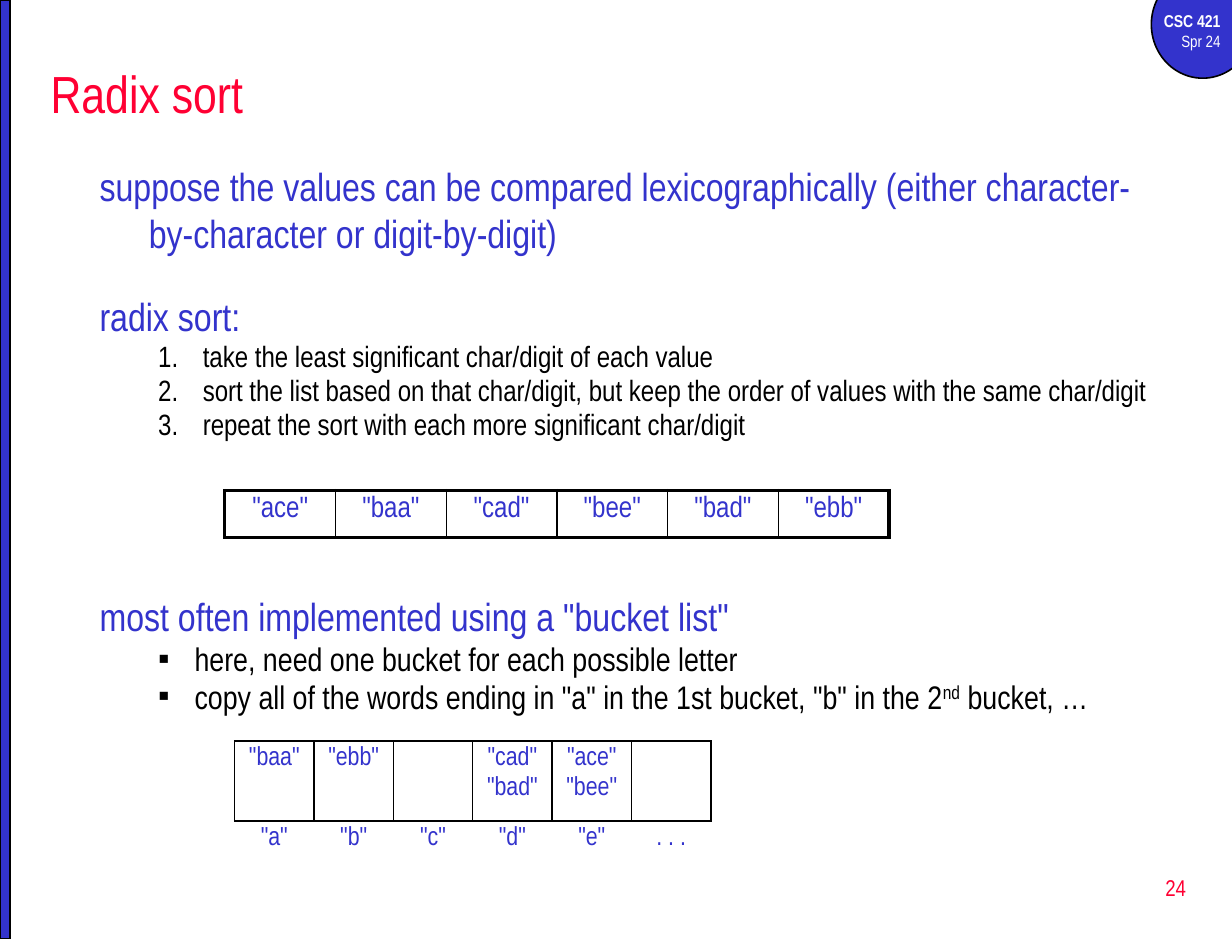
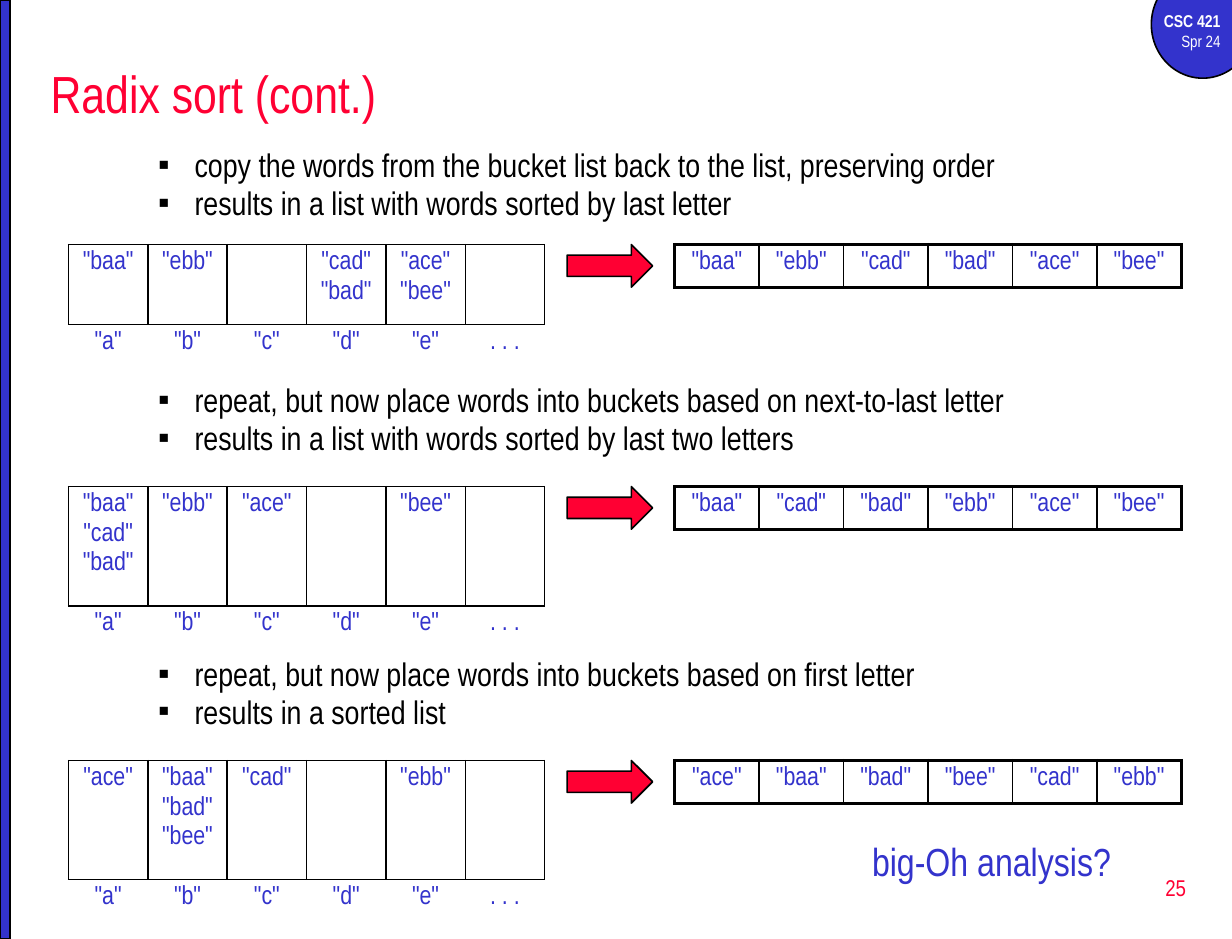
from lxml.etree import SubElement
from pptx import Presentation
from pptx.dml.color import RGBColor
from pptx.enum.shapes import MSO_SHAPE
from pptx.enum.text import MSO_ANCHOR, PP_ALIGN
from pptx.oxml.ns import qn
from pptx.util import Inches, Pt

BLUE = RGBColor(0x33, 0x33, 0xCC)
RED = RGBColor(0xFF, 0x00, 0x33)
BLACK = RGBColor(0, 0, 0)
WHITE = RGBColor(0xFF, 0xFF, 0xFF)
FONT = "Arial Narrow"
COLUMNS, ROWS = 126, 96
WIDTH, HEIGHT = Inches(10.5), Inches(8)
THIN, THICK = 1, 2.25
LETTERS = ['"a"', '"b"', '"c"', '"d"', '"e"', ". . ."]
BY_LAST_LETTER = ["baa", "ebb", "", "cad bad", "ace bee", ""]
PASSES = [
    (25, 15,
     ["copy the words from the bucket list back to the list, preserving order",
      "results in a list with words sorted by last letter"],
     BY_LAST_LETTER, "baa ebb cad bad ace bee"),
    (49.75, 39,
     ["repeat, but now place words into buckets based on next-to-last letter",
      "results in a list with words sorted by last two letters"],
     ["baa cad bad", "ebb", "ace", "", "bee", ""], "baa cad bad ebb ace bee"),
    (77.75, 67,
     ["repeat, but now place words into buckets based on first letter",
      "results in a sorted list"],
     ["ace", "baa bad bee", "cad", "", "ebb", ""], "ace baa bad bee cad ebb"),
]


def across(columns):
    """Return the length of a number of grid columns."""
    return round(WIDTH * columns / COLUMNS)


def down(rows):
    """Return the length of a number of grid rows."""
    return round(HEIGHT * rows / ROWS)


def place(left, top, width, height):
    """Return a grid area as slide lengths."""
    return across(left), down(top), across(width), down(height)


def style(paragraph, size, color, align=PP_ALIGN.LEFT, bold=False):
    """Format every run of a paragraph."""
    paragraph.alignment = align
    for run in paragraph.runs:
        run.font.name = FONT
        run.font.size = Pt(size)
        run.font.bold = bold
        run.font.color.rgb = color


def space_before(paragraph, percent):
    """Set the gap above a paragraph as a share of its text size."""
    properties = paragraph._p.get_or_add_pPr()
    gap = properties.makeelement(qn("a:spcBef"), {})
    SubElement(gap, qn("a:spcPct"), val=str(percent * 1000))
    properties.insert(0, gap)


def indent(paragraph, margin, hanging):
    """Give a paragraph a hanging indent in inches."""
    properties = paragraph._p.get_or_add_pPr()
    properties.set("marL", str(Inches(margin)))
    properties.set("indent", str(-Inches(hanging)))


def add_text(slide, area, lines, anchor=MSO_ANCHOR.TOP):
    """Add a wrapping text box and return its paragraphs."""
    frame = slide.shapes.add_textbox(*place(*area)).text_frame
    frame.word_wrap = True
    frame.vertical_anchor = anchor
    frame.text = "\n".join(lines)
    return frame.paragraphs


def heading(paragraph, percent=20):
    """Format a blue statement."""
    style(paragraph, 24, BLUE)
    space_before(paragraph, percent)


def list_item(paragraph, size, margin, hanging):
    """Format a tight second-level item and return its properties."""
    style(paragraph, size, BLACK)
    paragraph.level = 1
    space_before(paragraph, 20)
    paragraph.line_spacing = 0.8
    indent(paragraph, margin, hanging)
    return paragraph._p.get_or_add_pPr()


def bullet_item(paragraph):
    """Format an item with a square bullet."""
    properties = list_item(paragraph, 20, 0.81, 0.31)
    SubElement(properties, qn("a:buFont"), typeface="Arial")
    SubElement(properties, qn("a:buChar"), char="▪")


def numbered_item(paragraph):
    """Format a numbered step."""
    properties = list_item(paragraph, 18, 0.88, 0.38)
    SubElement(properties, qn("a:buFont"), typeface="+mj-lt")
    SubElement(properties, qn("a:buAutoNum"), type="arabicPeriod")


def add_filled(slide, preset, area, color):
    """Add a filled shape with a thin black outline."""
    shape = slide.shapes.add_shape(preset, *place(*area))
    shape.shadow.inherit = False
    shape.fill.solid()
    shape.fill.fore_color.rgb = color
    shape.line.color.rgb = BLACK
    shape.line.width = Pt(THIN)
    return shape


def set_borders(cell, left, right, top, bottom):
    """Draw the cell sides with the given widths, zero for none."""
    properties = cell._tc.get_or_add_tcPr()
    for side, width in zip("LRTB", (left, right, top, bottom)):
        line = SubElement(properties, qn(f"a:ln{side}"), w=str(Pt(width)))
        if width:
            fill = SubElement(line, qn("a:solidFill"))
            SubElement(fill, qn("a:srgbClr"), val=str(BLACK))
        else:
            SubElement(line, qn("a:noFill"))


def fill_cell(cell, text, size, borders):
    """Write centred words into a bordered cell without fill."""
    cell.text_frame.text = text
    for paragraph in cell.text_frame.paragraphs:
        style(paragraph, size, BLUE, PP_ALIGN.CENTER)
        space_before(paragraph, 20)
    set_borders(cell, *borders)
    cell.fill.background()


def add_grid(slide, left, top, column_width, row_heights):
    """Add an unstyled table with one column for each letter."""
    count = len(LETTERS)
    area = place(left, top, count * column_width, sum(row_heights))
    table = slide.shapes.add_table(len(row_heights), count, *area).table
    table.first_row = table.horz_banding = False
    for column in table.columns:
        column.width = across(column_width)
    for row, height in zip(table.rows, row_heights):
        row.height = down(height)
    return table


def quoted(words):
    """Return the words in quotes, one on each line."""
    return "\n".join(f'"{word}"' for word in words.split())


def add_word_list(slide, left, top, column_width, height, size, words):
    """Add the one-row list of words with a thick frame."""
    table = add_grid(slide, left, top, column_width, [height])
    words = words.split()
    for index, word in enumerate(words):
        first = THICK if index == 0 else THIN
        last = THICK if index == len(words) - 1 else THIN
        fill_cell(table.cell(0, index), quoted(word), size, (first, last, THICK, THICK))


def add_buckets(slide, left, top, buckets):
    """Add the buckets with their letters below."""
    depth = max(len(words.split()) for words in buckets)
    table = add_grid(slide, left, top, 8.12, [4 * depth + 0.2, 8])
    for index, (words, letter) in enumerate(zip(buckets, LETTERS)):
        fill_cell(table.cell(0, index), quoted(words), 16, (THIN,) * 4)
        fill_cell(table.cell(1, index), letter, 16, (0, 0, THIN, 0))


def add_page(deck, title, number):
    """Add a slide with the band, course badge, title and number."""
    slide = deck.slides.add_slide(deck.slide_layouts[6])
    add_filled(slide, MSO_SHAPE.OVAL, (117.75, -3, 10.5, 11), BLUE)
    course, term = add_text(slide, (116, 0.5, 10, 5.5), ["CSC 421", "Spr 24"])
    style(course, 10.5, WHITE, PP_ALIGN.RIGHT, bold=True)
    style(term, 10, WHITE, PP_ALIGN.RIGHT)
    add_filled(slide, MSO_SHAPE.RECTANGLE, (0, 0, 1, ROWS), BLUE)
    page = add_text(slide, (96.25, 87.5, 26.25, 6.35), [str(number)], MSO_ANCHOR.MIDDLE)
    style(page[0], 14, RED, PP_ALIGN.RIGHT)
    name = add_text(slide, (4, 5, 119, 9), [title], MSO_ANCHOR.MIDDLE)
    style(name[0], 32, RED)
    return slide


def build_method(deck):
    """Build the slide that explains the method."""
    slide = add_page(deck, "Radix sort", 24)
    premise, method, *steps = add_text(slide, (9, 16, 111, 31), [
        "suppose the values can be compared lexicographically "
        "(either character-by-character or digit-by-digit)",
        "radix sort:",
        "take the least significant char/digit of each value",
        "sort the list based on that char/digit, but keep the order of values "
        "with the same char/digit",
        "repeat the sort with each more significant char/digit",
    ])
    heading(premise)
    indent(premise, 0.42, 0.42)
    style(method, 24, BLUE)
    indent(method, 0.42, 0.42)
    method.space_before = Pt(22)
    for step in steps:
        numbered_item(step)
    add_word_list(slide, 23, 50.15, 11.32, 4.8, 18, "ace baa cad bee bad ebb")

    usage, need, copying = add_text(slide, (9, 60, 110, 14), [
        'most often implemented using a "bucket list"',
        "here, need one bucket for each possible letter",
        'copy all of the words ending in "a" in the 1st bucket, "b" in the 2',
    ])
    ordinal = copying.add_run()
    ordinal.text = "nd"
    ordinal._r.get_or_add_rPr().set("baseline", "30000")
    copying.add_run().text = " bucket, …"
    heading(usage)
    bullet_item(need)
    bullet_item(copying)
    add_buckets(slide, 24, 75.75, BY_LAST_LETTER)


def build_passes(deck):
    """Build the slide that follows each sorting pass."""
    slide = add_page(deck, "Radix sort (cont.)", 25)
    for top, notes_top, notes, buckets, words in PASSES:
        for note in add_text(slide, (9, notes_top, 111, 9), notes):
            bullet_item(note)
        add_buckets(slide, 7, top, buckets)
        add_filled(slide, MSO_SHAPE.RIGHT_ARROW, (58, top, 8.75, 4.35), RED)
        add_word_list(slide, 69, top, 8.64, 4.4, 16, words)
    question = add_text(slide, (88, 85, 28, 6), ["big-Oh analysis?"])
    heading(question[0], 50)


def main():
    """Build and save the deck."""
    deck = Presentation()
    deck.slide_width, deck.slide_height = WIDTH, HEIGHT
    build_method(deck)
    build_passes(deck)
    deck.save("out.pptx")


if __name__ == "__main__":
    main()
